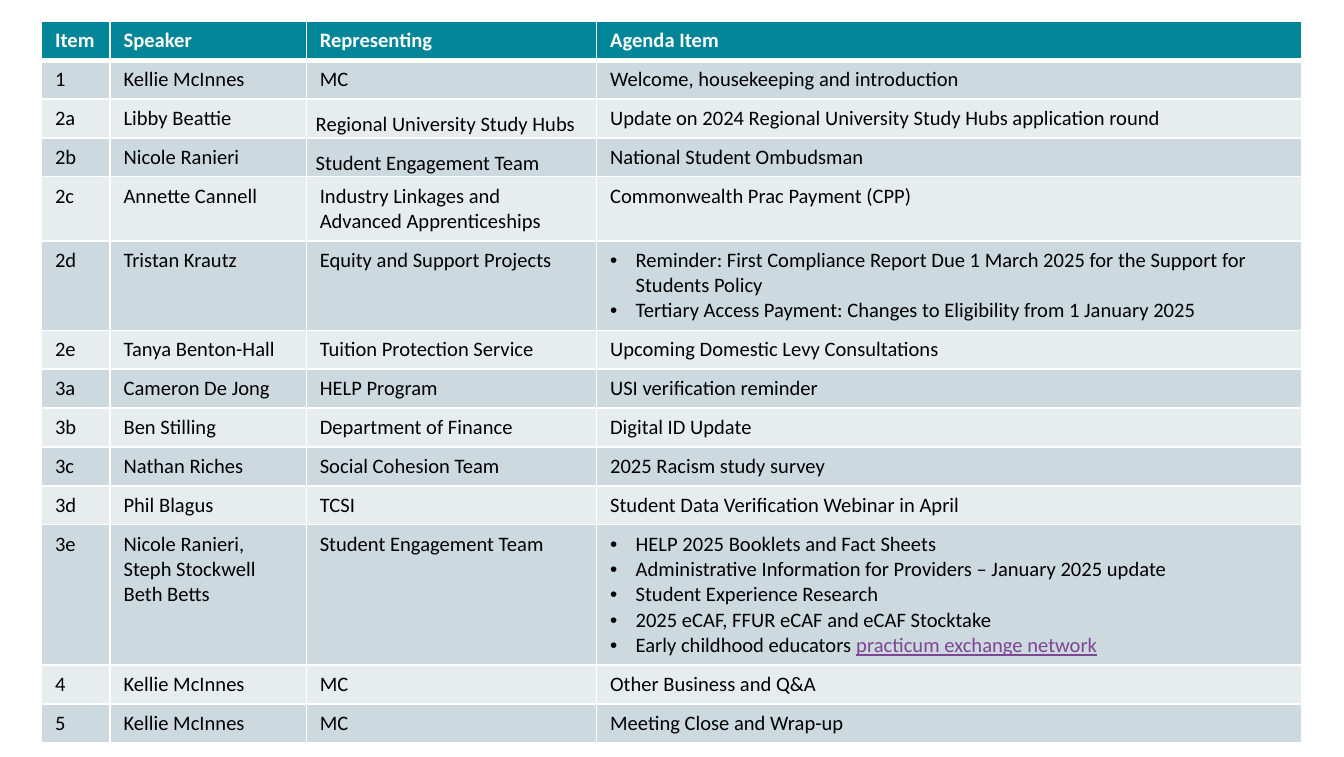
from lxml.etree import SubElement
from pptx import Presentation
from pptx.dml.color import RGBColor
from pptx.oxml import parse_xml
from pptx.oxml.ns import nsdecls, qn
from pptx.util import Inches, Pt

TEAL = RGBColor(0x00, 0x85, 0x99)
BLUE_GREY = RGBColor(0xCC, 0xD9, 0xDE)
PALE_GREY = RGBColor(0xE7, 0xED, 0xEF)
PURPLE = RGBColor(0x7F, 0x45, 0x94)
BLACK = RGBColor(0, 0, 0)
WHITE = RGBColor(0xFF, 0xFF, 0xFF)

LINK = "practicum exchange network"
COLUMNS = (0.051, 0.146, 0.216, 0.525)
LINE, PADDING = 0.033, 0.018
RAISED = ("2a", "2b")

HEADER = ("Item", "Speaker", "Representing", "Agenda Item")
AGENDA = [
    ("1", "Kellie McInnes", "MC", "Welcome, housekeeping and introduction"),
    ("2a", "Libby Beattie", "Regional University Study Hubs",
     "Update on 2024 Regional University Study Hubs application round"),
    ("2b", "Nicole Ranieri", "Student Engagement Team", "National Student Ombudsman"),
    ("2c", "Annette Cannell", "Industry Linkages and Advanced Apprenticeships",
     "Commonwealth Prac Payment (CPP)"),
    ("2d", "Tristan Krautz", "Equity and Support Projects", [
        "Reminder: First Compliance Report Due 1 March 2025 for the Support for Students Policy",
        "Tertiary Access Payment: Changes to Eligibility from 1 January 2025"]),
    ("2e", "Tanya Benton-Hall", "Tuition Protection Service",
     "Upcoming Domestic Levy Consultations"),
    ("3a", "Cameron De Jong", "HELP Program", "USI verification reminder"),
    ("3b", "Ben Stilling", "Department of Finance", "Digital ID Update"),
    ("3c", "Nathan Riches", "Social Cohesion Team", "2025 Racism study survey"),
    ("3d", "Phil Blagus", "TCSI", "Student Data Verification Webinar in April"),
    ("3e", "Nicole Ranieri, Steph Stockwell\nBeth Betts", "Student Engagement Team", [
        "HELP 2025 Booklets and Fact Sheets",
        "Administrative Information for Providers – January 2025 update",
        "Student Experience Research",
        "2025 eCAF, FFUR eCAF and eCAF Stocktake",
        "Early childhood educators " + LINK]),
    ("4", "Kellie McInnes", "MC", "Other Business and Q&A"),
    ("5", "Kellie McInnes", "MC", "Meeting Close and Wrap-up"),
]
LINES = {"2c": 2, "2d": 3, "3e": 5}


class Deck:
    font = {"name": "Calibri", "size": Pt(11), "bold": False}

    def __init__(self, width, height):
        self.prs = Presentation()
        self.prs.slide_width, self.prs.slide_height = width, height
        self.slide = self.prs.slides.add_slide(self.prs.slide_layouts[6])

    def x(self, share):
        return round(self.prs.slide_width * share)

    def y(self, share):
        return round(self.prs.slide_height * share)

    def table(self, left, top, columns, heights):
        frame = self.slide.shapes.add_table(
            len(heights), len(columns), self.x(left), self.y(top),
            self.x(sum(columns)), self.y(sum(heights)))
        table = frame.table
        table.horz_banding = False
        for column, share in zip(table.columns, columns):
            column.width = self.x(share)
        for row, share in zip(table.rows, heights):
            row.height = self.y(share)
        return table

    def borders(self, cell, **widths):
        tcPr = cell._tc.get_or_add_tcPr()
        for i, side in enumerate("LRTB"):
            tcPr.insert(i, parse_xml(
                f'<a:ln{side} {nsdecls("a")} w="{Pt(widths.get(side, 1))}">'
                f'<a:solidFill><a:srgbClr val="{WHITE}"/></a:solidFill></a:ln{side}>'))

    def bullet(self, p):
        pPr = p._p.get_or_add_pPr()
        pPr.set("marL", str(Inches(0.19)))
        pPr.set("indent", str(-Inches(0.19)))
        SubElement(pPr, qn("a:buFont"), typeface="Arial")
        SubElement(pPr, qn("a:buChar"), char="•")

    def run(self, p, text, color, **extra):
        r = p.add_run()
        r.text = text
        r.font.color.rgb = color
        for name, value in {**self.font, **extra}.items():
            setattr(r.font, name, value)

    def cell(self, cell, content, fill, color=BLACK, **extra):
        cell.fill.solid()
        cell.fill.fore_color.rgb = fill
        tf = cell.text_frame
        bulleted = isinstance(content, list)
        for i, text in enumerate(content if bulleted else content.split("\n")):
            p = tf.add_paragraph() if i else tf.paragraphs[0]
            if bulleted:
                self.bullet(p)
            before, link, _ = text.partition(LINK)
            self.run(p, before, color, **extra)
            if link:
                self.run(p, link, PURPLE, underline=True)

    def raise_spacing(self, cell):
        margins = {"margin_left": Inches(0.07), "margin_right": Inches(0.07),
                   "margin_top": 0, "margin_bottom": 0}
        for name, value in margins.items():
            setattr(cell, name, value)
        cell.text_frame.paragraphs[0].line_spacing = 1.5


def main():
    deck = Deck(Inches(10), Inches(5.63))
    heights = [PADDING + LINE * LINES.get(row[0], 1) for row in [HEADER] + AGENDA]
    table = deck.table(0.031, 0.028, COLUMNS, heights)
    for c, text in enumerate(HEADER):
        cell = table.cell(0, c)
        deck.cell(cell, text, TEAL, WHITE, bold=True)
        deck.borders(cell, B=3)
    for r, row in enumerate(AGENDA, 1):
        for c, content in enumerate(row):
            cell = table.cell(r, c)
            deck.cell(cell, content, BLUE_GREY if r % 2 else PALE_GREY)
            deck.borders(cell, T=3 if r == 1 else 1)
        if row[0] in RAISED:
            deck.raise_spacing(table.cell(r, 2))
    deck.prs.save("out.pptx")


if __name__ == "__main__":
    main()
